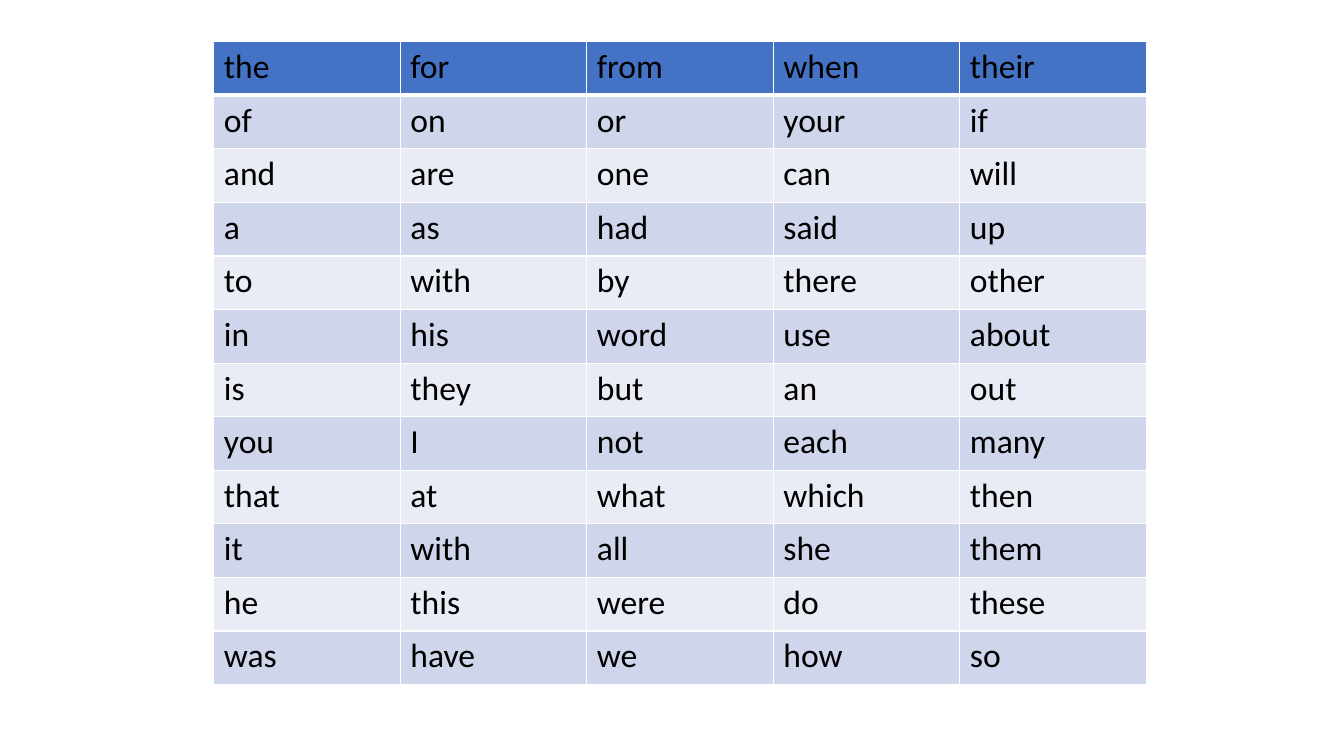
from lxml import etree
from pptx import Presentation
from pptx import util as u
from pptx.dml.color import RGBColor
from pptx.oxml import ns

COLORS = {
    "header": "4472C4",
    "band_dark": "CFD5EA",
    "band_light": "E9EBF5",
    "border": "FFFFFF",
    "text": "000000",
}

# Each string is one column, read from top to bottom
WORD_COLUMNS = [
    "the of and a to in is you that it he was",
    "for on are as with his they I at with this have",
    "from or one had by word but not what all were we",
    "when your can said there use an each which she do how",
    "their if will up other about out many then them these so",
]


def write_text(tf, text, size=24, font="Calibri", color="text", bold=False):
    p = tf.paragraphs[0]
    r = p.add_run()
    r.text = text
    r.font.size = u.Pt(size)
    r.font.name = font
    r.font.bold = bold
    r.font.color.rgb = RGBColor.from_string(COLORS[color])


def set_borders(cell, bottom=1):
    tc_pr = cell._tc.get_or_add_tcPr()
    for side, width in (("L", 1), ("R", 1), ("T", 1), ("B", bottom)):
        ln = etree.SubElement(tc_pr, ns.qn(f"a:ln{side}"), w=str(u.Pt(width)))
        fill = etree.SubElement(ln, ns.qn("a:solidFill"))
        etree.SubElement(fill, ns.qn("a:srgbClr"), val=COLORS["border"])


def row_color(row):
    if row == 0:
        return "header"
    return "band_dark" if row % 2 else "band_light"


def add_word_table(s, left, top, width, height):
    columns = [words.split() for words in WORD_COLUMNS]
    n_rows, n_cols = len(columns[0]), len(columns)
    table = s.shapes.add_table(n_rows, n_cols, left, top, width, height).table

    # Equal columns and rows
    for column in table.columns:
        column.width = int(width / n_cols)
    for row in table.rows:
        row.height = int(height / n_rows)

    # Words, with a heavier rule below the header
    for col, words in enumerate(columns):
        for row, word in enumerate(words):
            cell = table.cell(row, col)
            set_borders(cell, bottom=1 if row else 3)
            cell.fill.solid()
            cell.fill.fore_color.rgb = RGBColor.from_string(COLORS[row_color(row)])
            write_text(cell.text_frame, word)


def main():
    prs = Presentation()
    prs.slide_width, prs.slide_height = u.Cm(33.87), u.Cm(19.05)
    s = prs.slides.add_slide(prs.slide_layouts[6])
    add_word_table(s, u.Cm(5.39), u.Cm(1.05), u.Cm(23.5), u.Cm(16.2))
    prs.save("out.pptx")


if __name__ == "__main__":
    main()
